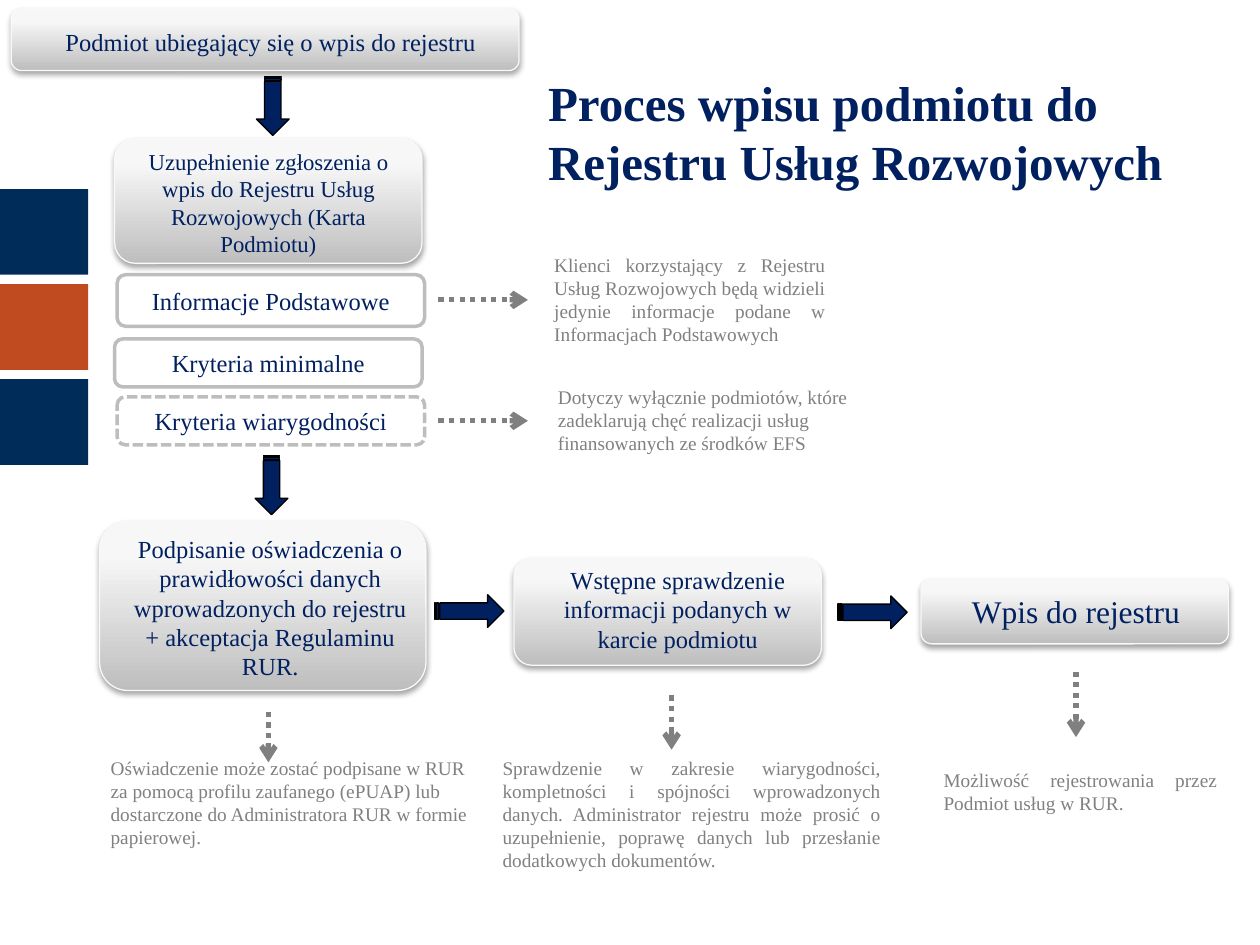
import pptx
import pptx.util
import pptx.oxml
import pptx.dml.color
import pptx.enum.dml
import pptx.enum.shapes
import pptx.enum.text
from pptx.util import Inches

SHAPE = pptx.enum.shapes.MSO_SHAPE
DASH = pptx.enum.dml.MSO_LINE
ALIGN = pptx.enum.text.PP_ALIGN
ANCHOR = pptx.enum.text.MSO_ANCHOR
NAMESPACE = 'xmlns:a="http://schemas.openxmlformats.org/drawingml/2006/main"'
COLORS = {
    "navy": "002060", "band_blue": "002C5A", "band_orange": "C14B20",
    "grey": "808080", "border": "BDBDBD", "white": "FFFFFF", "black": "000000",
    "step_dark": "BEBEBE", "step_light": "F7F7F7", "step_edge": "F9F9F9",
}


def color(name):
    return pptx.dml.color.RGBColor.from_string(COLORS[name])


def write(frame, text, size=14, ink="navy", bold=False, align=ALIGN.CENTER,
          anchor=ANCHOR.MIDDLE):
    frame.word_wrap = True
    frame.auto_size = pptx.enum.text.MSO_AUTO_SIZE.NONE
    frame.vertical_anchor = anchor
    para = frame.paragraphs[0]
    para.alignment = align
    span = para.add_run()
    span.text = text
    span.font.name = "Times New Roman"
    span.font.size = pptx.util.Pt(size)
    span.font.bold = bold
    span.font.color.rgb = color(ink)


deck = pptx.Presentation()
deck.slide_width, deck.slide_height = Inches(10), Inches(7.5)
page = deck.slides.add_slide(deck.slide_layouts[5])

title = page.shapes.title
title.left, title.top = Inches(4.25), Inches(0.52)
title.width, title.height = Inches(5.5), Inches(1.04)
write(title.text_frame, "Proces wpisu podmiotu do Rejestru Usług Rozwojowych",
      size=28, bold=True, align=ALIGN.LEFT)

# Side bands
for row, name in enumerate(["band_blue", "band_orange", "band_blue"]):
    band = page.shapes.add_shape(SHAPE.RECTANGLE, 0, Inches(1.5 + row * 0.755),
                                 Inches(0.7), Inches(0.68))
    band.shadow.inherit = False
    band.fill.solid()
    band.fill.fore_color.rgb = color(name)
    band.line.fill.background()

# Process steps: card position, label position, size, text
steps = [
    ((0.09, 0.07, 4.03, 0.49), (0.33, 0.16, 3.64, 0.34), 14,
     "Podmiot ubiegający się o wpis do rejestru"),
    ((0.91, 1.1, 2.44, 0.99), (0.91, 1.1, 2.44, 1.01), 13,
     "Uzupełnienie zgłoszenia o wpis do Rejestru Usług Rozwojowych (Karta Podmiotu)"),
    ((0.79, 4.14, 2.59, 1.34), (0.94, 4.18, 2.41, 1.28), 14,
     "Podpisanie oświadczenia o prawidłowości danych wprowadzonych do rejestru "
     "+ akceptacja Regulaminu RUR."),
    ((4.08, 4.43, 2.44, 0.85), (4.23, 4.43, 2.3, 0.81), 14,
     "Wstępne sprawdzenie informacji podanych w karcie podmiotu"),
    ((7.31, 4.59, 2.44, 0.52), (7.39, 4.65, 2.3, 0.4), 18, "Wpis do rejestru"),
]
for card_place, label_place, size, text in steps:
    group = page.shapes.add_group_shape()
    card = group.shapes.add_shape(SHAPE.ROUNDED_RECTANGLE, *map(Inches, card_place))
    card.fill.gradient()
    card.fill.gradient_angle = 90
    dark, light = card.fill.gradient_stops
    dark.color.rgb, dark.position = color("step_dark"), 0
    light.color.rgb, light.position = color("step_light"), 0.8
    card.line.color.rgb = color("step_edge")
    card.line.width = pptx.util.Pt(0.75)
    card._element.spPr.append(pptx.oxml.parse_xml(
        f'<a:effectLst {NAMESPACE}><a:outerShdw blurRad="40000" dist="23000" '
        'dir="5400000" rotWithShape="0"><a:srgbClr val="000000">'
        '<a:alpha val="35000"/></a:srgbClr></a:outerShdw></a:effectLst>'))
    label = group.shapes.add_textbox(*map(Inches, label_place))
    write(label.text_frame, text, size=size)

# Parts of the application form
sections = [
    (0.93, 2.18, 0.41, "Informacje Podstawowe", None),
    (0.91, 2.69, 0.38, "Kryteria minimalne", None),
    (0.93, 3.15, 0.38, "Kryteria wiarygodności", "sysDash"),
]
for left, top, height, text, dash in sections:
    section = page.shapes.add_shape(SHAPE.ROUNDED_RECTANGLE, Inches(left), Inches(top),
                                    Inches(2.44), Inches(height))
    section.shadow.inherit = False
    section.fill.solid()
    section.fill.fore_color.rgb = color("white")
    section.line.color.rgb = color("border")
    section.line.width = pptx.util.Pt(2)
    if dash:
        section.line.dash_style = DASH.SQUARE_DOT
    write(section.text_frame, text)

# Block arrows between steps
for left, top, width, turn in [(1.93, 0.71, 0.47, 90), (1.92, 3.72, 0.47, 90),
                               (3.45, 4.72, 0.55, 0), (6.65, 4.73, 0.55, 0)]:
    arrow = page.shapes.add_shape(SHAPE.STRIPED_RIGHT_ARROW, Inches(left), Inches(top),
                                  Inches(width), Inches(0.26))
    arrow.rotation = turn
    arrow.shadow.inherit = False
    arrow.fill.solid()
    arrow.fill.fore_color.rgb = color("navy")
    arrow.line.color.rgb = color("black")
    arrow.line.width = pptx.util.Pt(0.75)

# Dotted pointers to the notes
for ends in [(3.48, 2.38, 4.19, 2.38), (3.48, 3.34, 4.19, 3.34), (2.13, 5.65, 2.13, 6.05),
             (5.33, 5.52, 5.33, 5.95), (8.54, 5.33, 8.54, 5.85)]:
    pointer = page.shapes.add_connector(pptx.enum.shapes.MSO_CONNECTOR.STRAIGHT,
                                        *map(Inches, ends))
    pointer.line.color.rgb = color("grey")
    pointer.line.width = pptx.util.Pt(3)
    pointer.line.dash_style = DASH.ROUND_DOT
    pointer.line._get_or_add_ln().append(
        pptx.oxml.parse_xml(f'<a:tailEnd {NAMESPACE} type="arrow"/>'))
    pointer._element.spPr.append(pptx.oxml.parse_xml(f"<a:effectLst {NAMESPACE}/>"))

notes = [
    ((4.3, 1.96, 2.35, 0.84), ALIGN.JUSTIFY,
     "Klienci korzystający z Rejestru Usług Rozwojowych będą widzieli jedynie "
     "informacje podane w Informacjach Podstawowych"),
    ((4.33, 3.01, 2.6, 0.66), ALIGN.LEFT,
     "Dotyczy wyłącznie podmiotów, które zadeklarują chęć realizacji usług "
     "finansowanych ze środków EFS"),
    ((0.78, 5.95, 3.03, 0.84), ALIGN.LEFT,
     "Oświadczenie może zostać podpisane w RUR za pomocą profilu zaufanego (ePUAP) "
     "lub dostarczone do Administratora RUR w formie papierowej."),
    ((3.89, 5.95, 3.2, 1.03), ALIGN.JUSTIFY,
     "Sprawdzenie w zakresie wiarygodności, kompletności i spójności wprowadzonych "
     "danych. Administrator rejestru może prosić o uzupełnienie, poprawę danych lub "
     "przesłanie dodatkowych dokumentów."),
    ((7.39, 6.05, 2.37, 0.47), ALIGN.JUSTIFY,
     "Możliwość rejestrowania przez Podmiot usług w RUR."),
]
for place, align, text in notes:
    note = page.shapes.add_textbox(*map(Inches, place))
    write(note.text_frame, text, size=11, ink="grey", align=align, anchor=ANCHOR.TOP)

deck.save("out.pptx")
